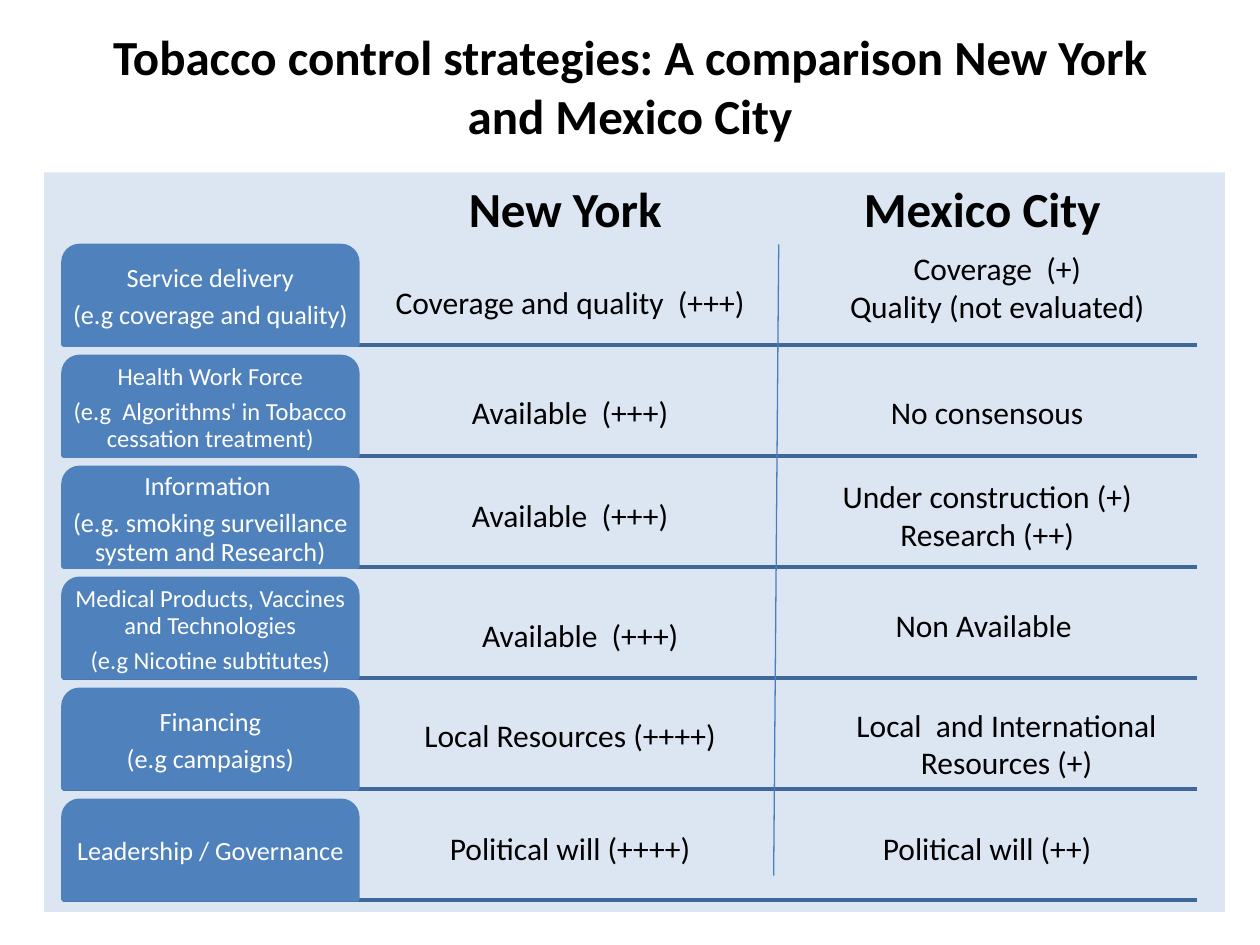
from dataclasses import dataclass

import pptx
import pptx.dml.color
import pptx.enum.shapes
import pptx.enum.text
import pptx.oxml.xmlchemy
import pptx.slide
import pptx.text.text
import pptx.util
from lxml import etree
from pptx.oxml import ns

Pt = pptx.util.Pt
RGBColor = pptx.dml.color.RGBColor
Shape = pptx.enum.shapes.MSO_SHAPE
Anchor = pptx.enum.text.MSO_ANCHOR

BLACK = RGBColor(0x00, 0x00, 0x00)
WHITE = RGBColor(0xFF, 0xFF, 0xFF)
PANEL_BLUE = RGBColor(0xDC, 0xE6, 0xF2)
LABEL_BLUE = RGBColor(0x4F, 0x81, 0xBD)
RULE_BLUE = RGBColor(0x3F, 0x67, 0x97)
DIVIDER_BLUE = RGBColor(0x4B, 0x7E, 0xBC)

ROW_LEFT, ROW_RIGHT = 36, 684
FIRST_RULE, ROW_PITCH = 197.2, 63.4
LABEL_WIDTH, LABEL_HEIGHT = 168.5, 56.9
ANSWER_WIDTH = 226.8
NEW_YORK_LEFT, MEXICO_LEFT = 212.4, 450.7


@dataclass
class Answer:
    text: str
    top: float
    left: float
    width: float = ANSWER_WIDTH


@dataclass
class Strategy:
    label: str
    size: float
    new_york: Answer
    mexico: Answer


STRATEGIES = [
    Strategy("Service delivery\n(e.g coverage and quality)", 15,
             Answer("Coverage and quality  (+++)", 158.4, NEW_YORK_LEFT),
             Answer("Coverage  (+)\nQuality (not evaluated)", 139, 456.5)),
    Strategy("Health Work Force\n(e.g  Algorithms' in Tobacco cessation treatment)", 14,
             Answer("Available  (+++)", 221, NEW_YORK_LEFT),
             Answer("No consensous", 221, MEXICO_LEFT)),
    Strategy("Information \n(e.g. smoking surveillance system and Research)", 15,
             Answer("Available  (+++)", 280, NEW_YORK_LEFT),
             Answer("Under construction (+)\nResearch (++)", 269.3, MEXICO_LEFT)),
    Strategy("Medical Products, Vaccines and Technologies\n(e.g Nicotine subtitutes)", 14,
             Answer("Available  (+++)", 348.5, 218.2),
             Answer("Non Available ", 342.7, MEXICO_LEFT)),
    Strategy("Financing\n(e.g campaigns)", 15,
             Answer("Local Resources (++++)", 405.4, NEW_YORK_LEFT),
             Answer("Local  and International Resources (+)", 399.6, MEXICO_LEFT, 249)),
    Strategy("Leadership / Governance", 15,
             Answer("Political will (++++)", 470.2, NEW_YORK_LEFT),
             Answer("Political will (++)", 470.2, MEXICO_LEFT)),
]


def write_text(frame: pptx.text.text.TextFrame, text: str, size: float,
               color: RGBColor, bold: bool = False) -> None:
    frame.text = text
    frame.word_wrap = True
    for para in frame.paragraphs:
        para.alignment = pptx.enum.text.PP_ALIGN.CENTER
        for span in para.runs:
            span.font.name = "Calibri"
            span.font.size = Pt(size)
            span.font.bold = bold
            span.font.color.rgb = color


def add_text(page: pptx.slide.Slide, answer: Answer, size: float = 18,
             bold: bool = False) -> None:
    height = 7.2 + 1.22 * size * (answer.text.count("\n") + 1)
    box = page.shapes.add_textbox(Pt(answer.left), Pt(answer.top), Pt(answer.width), Pt(height))
    write_text(box.text_frame, answer.text, size, BLACK, bold)


def add_line(page: pptx.slide.Slide, start: tuple[float, float], end: tuple[float, float],
             color: RGBColor, width: float) -> None:
    line = page.shapes.add_connector(pptx.enum.shapes.MSO_CONNECTOR.STRAIGHT,
                                     Pt(start[0]), Pt(start[1]), Pt(end[0]), Pt(end[1]))
    line.line.color.rgb = color
    line.line.width = Pt(width)
    etree.SubElement(line._element.spPr, ns.qn("a:effectLst"))


def add_label(page: pptx.slide.Slide, strategy: Strategy, rule: float) -> None:
    label = page.shapes.add_shape(Shape.ROUND_2_SAME_RECTANGLE, Pt(ROW_LEFT),
                                  Pt(rule - LABEL_HEIGHT), Pt(LABEL_WIDTH), Pt(LABEL_HEIGHT))
    label.shadow.inherit = False
    label.fill.solid()
    label.fill.fore_color.rgb = LABEL_BLUE
    label.line.color.rgb = LABEL_BLUE
    label.line.width = Pt(2)
    frame = label.text_frame
    write_text(frame, strategy.label, strategy.size, WHITE)
    frame.vertical_anchor = Anchor.MIDDLE
    frame.margin_left = frame.margin_right = Pt(2.2)
    frame.margin_top = frame.margin_bottom = Pt(2.2)
    for para in frame.paragraphs:
        para.line_spacing = 0.9
        para.space_after = Pt(0.35 * strategy.size)


def main() -> None:
    deck = pptx.Presentation()
    deck.slide_width, deck.slide_height = Pt(720), Pt(540)
    page = deck.slides.add_slide(deck.slide_layouts[5])

    title = page.shapes.title
    title.left, title.top, title.width, title.height = Pt(36), Pt(3.6), Pt(648), Pt(90)
    write_text(title.text_frame,
               "Tobacco control strategies: A comparison New York and Mexico City",
               28, BLACK, bold=True)
    title.text_frame.auto_size = pptx.enum.text.MSO_AUTO_SIZE.NONE
    title.text_frame.vertical_anchor = Anchor.MIDDLE

    panel = page.shapes.add_shape(Shape.RECTANGLE, Pt(25.2), Pt(98.6), Pt(674.8), Pt(422.6))
    panel.shadow.inherit = False
    panel.fill.solid()
    panel.fill.fore_color.rgb = PANEL_BLUE
    panel.line.fill.background()

    for index, strategy in enumerate(STRATEGIES):
        rule = FIRST_RULE + index * ROW_PITCH
        add_line(page, (ROW_LEFT, rule), (ROW_RIGHT, rule), RULE_BLUE, 2)
        add_label(page, strategy, rule)
        add_text(page, strategy.new_york)
        add_text(page, strategy.mexico)

    add_line(page, (445, 139.7), (442.1, 500.4), DIVIDER_BLUE, 0.75)
    for city, left in (("New York", 218.2), ("Mexico City", 456.5)):
        add_text(page, Answer(city, 98.6, left, 209.5), 28, bold=True)

    deck.save("out.pptx")


if __name__ == "__main__":
    main()
